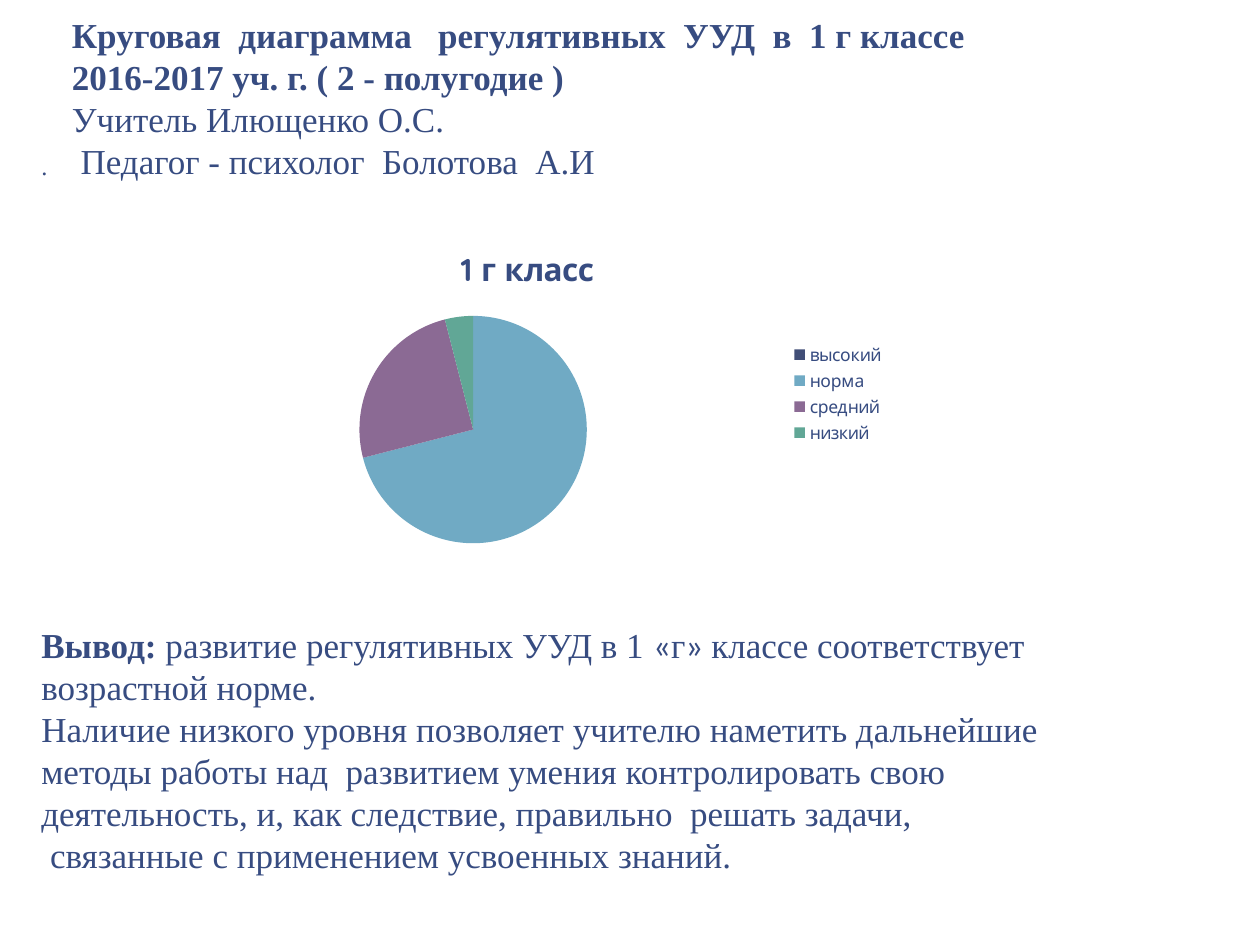
from pptx import Presentation
from pptx.chart.data import CategoryChartData
from pptx.dml.color import RGBColor
from pptx.enum.chart import XL_CHART_TYPE as ChartType, XL_LEGEND_POSITION as LegendPos
from pptx.enum.text import MSO_ANCHOR as Anchor, PP_ALIGN as Align
from pptx.util import Inches, Pt

NAVY = "374C81"
SERIF, SANS, SYMBOL = "Times New Roman", "Quicksand", "Calibri"


def color(value):
    return RGBColor.from_string(value)


class SlideBuilder:
    """Holds the style and the current slide."""

    def __init__(self, prs):
        self.size = 20
        self.slide = prs.slides.add_slide(prs.slide_layouts[5])
        fill = self.slide.background.fill
        fill.solid()
        fill.fore_color.rgb = color("FFFFFF")

    def style(self, font, size, bold=False, name=SERIF):
        font.name, font.size, font.bold = name, Pt(size), bold
        font.color.rgb = color(NAVY)

    def fill_frame(self, frame, paragraphs):
        """Each paragraph is (size, space before, runs); a run is (text, bold, font)."""
        frame.word_wrap = True
        frame.vertical_anchor = Anchor.TOP
        frame.margin_left = frame.margin_right = Inches(0.1)
        frame.margin_top = frame.margin_bottom = Inches(0.05)
        for i, (size, before, runs) in enumerate(paragraphs):
            para = frame.add_paragraph() if i else frame.paragraphs[0]
            para.alignment = Align.LEFT
            para.line_spacing = Pt(size * 1.2)
            para.space_before = Pt(before)
            para.space_after = Pt(0)
            for text, bold, name in runs:
                run = para.add_run()
                run.text = text
                self.style(run.font, size, bold, name)

    def title(self, box, lines):
        title = self.slide.shapes.title
        title.left, title.top, title.width, title.height = map(Inches, box)
        self.fill_frame(title.text_frame,
                        [(self.size, 0, [(text, bold, SERIF)]) for text, bold in lines])

    def text(self, box, paragraphs):
        self.fill_frame(self.slide.shapes.add_textbox(*map(Inches, box)).text_frame,
                        paragraphs)

    def pie(self, box, heading, levels):
        data = CategoryChartData()
        data.categories = [name for name, _, _ in levels]
        data.add_series("Series 1", [value for _, value, _ in levels])
        chart = self.slide.shapes.add_chart(ChartType.PIE, *map(Inches, box), data).chart
        self.style(chart.font, 10, name=SANS)
        chart.has_title = True
        run = chart.chart_title.text_frame.paragraphs[0].add_run()
        run.text = heading
        self.style(run.font, 18, True, SANS)
        chart.has_legend = True
        chart.legend.position = LegendPos.RIGHT
        chart.legend.include_in_layout = False
        plot = chart.plots[0]
        plot.vary_by_categories = True
        for i, (_, _, shade) in enumerate(levels):
            fill = plot.series[0].points[i].format.fill
            fill.solid()
            fill.fore_color.rgb = color(shade)


def main():
    prs = Presentation()
    prs.slide_width, prs.slide_height = Inches(10), Inches(7.5)
    page = SlideBuilder(prs)

    # Heading with class, term and staff
    page.title((0.47, 0.06, 9.53, 1.75), [
        ("Круговая  диаграмма   регулятивных  УУД  в  1 г классе", True),
        ("2016-2017 уч. г. ( 2 - полугодие )", True),
        ("Учитель Илющенко О.С.", False),
        (" Педагог - психолог  Болотова  А.И", False),
    ])

    # Pie of levels, in percent
    page.pie((1.25, 1.8, 5.87, 2.65), "1 г класс", [
        ("высокий", 0, "414E77"),
        ("норма", 71, "70AAC4"),
        ("средний", 25, "8B6A94"),
        ("низкий", 4, "61A796"),
    ])

    # Conclusion, set below the chart by paragraph spacing
    page.text((0.23, 1.15, 8.23, 6.23), [
        (14, 0, [(".", False, SERIF)]),
        (20, 253, [
            ("Вывод:", True, SERIF),
            (" развитие регулятивных УУД в 1 ", False, SERIF),
            ("«", False, SYMBOL),
            ("г", False, SERIF),
            ("» ", False, SYMBOL),
            ("классе соответствует возрастной норме.", False, SERIF),
        ]),
        (20, 0, [("Наличие низкого уровня позволяет учителю наметить дальнейшие "
                  "методы работы над  развитием умения контролировать свою "
                  "деятельность, и, как следствие, правильно  решать задачи,",
                  False, SERIF)]),
        (20, 0, [(" связанные с применением усвоенных знаний.", False, SERIF)]),
    ])

    prs.save("out.pptx")


if __name__ == "__main__":
    main()
